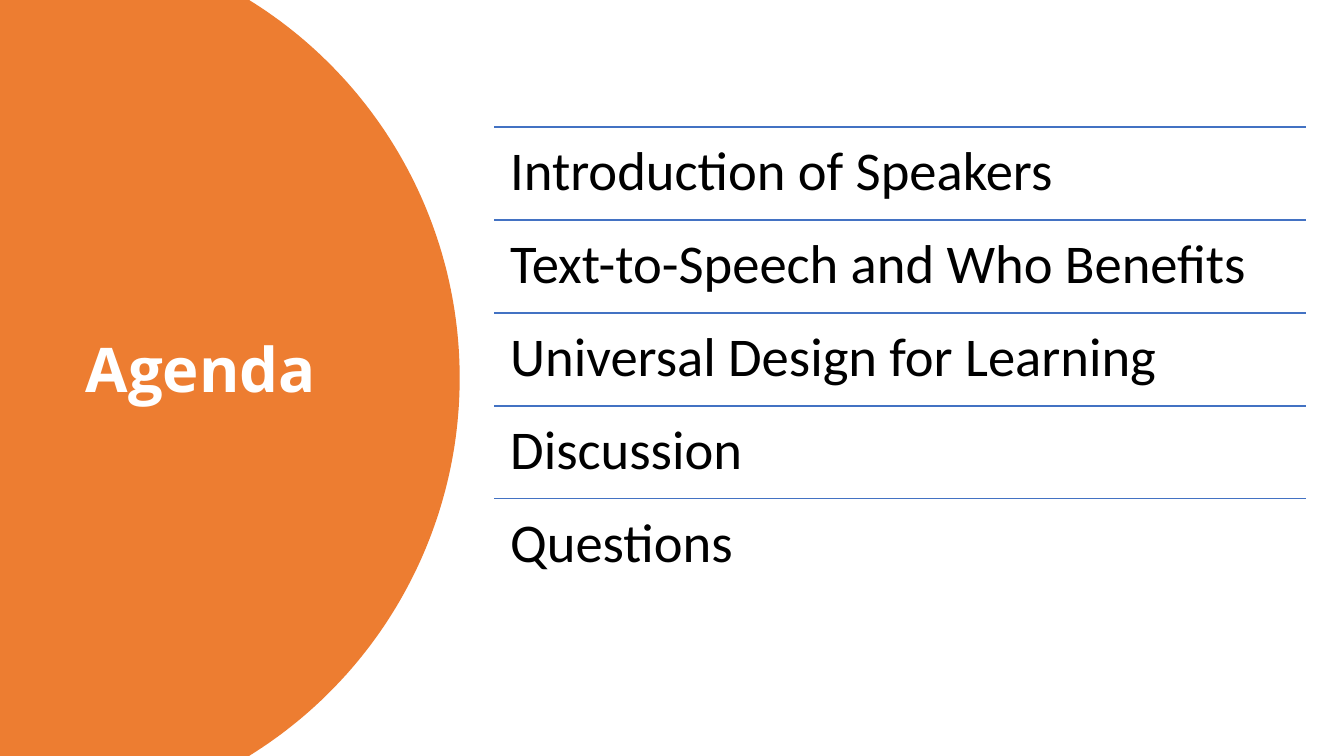
from math import asin, cos, sin

from lxml.etree import SubElement
from pptx import Presentation
from pptx.dml.color import RGBColor
from pptx.enum.shapes import MSO_CONNECTOR
from pptx.enum.text import MSO_ANCHOR, MSO_AUTO_SIZE, PP_ALIGN
from pptx.oxml.ns import qn
from pptx.util import Inches, Pt

AGENDA = [
    "Introduction of Speakers",
    "Text-to-Speech and Who Benefits",
    "Universal Design for Learning",
    "Discussion",
    "Questions",
]


def color(hex_value):
    return RGBColor.from_string(hex_value)


def style_text(frame, text, font_name, size, hex_value, bold=False):
    frame.text = text
    frame.word_wrap = True
    frame.auto_size = MSO_AUTO_SIZE.NONE
    paragraph = frame.paragraphs[0]
    paragraph.alignment = PP_ALIGN.LEFT
    paragraph.line_spacing = 0.9
    paragraph.font.name = font_name
    paragraph.font.size = Pt(size)
    paragraph.font.bold = bold
    paragraph.font.color.rgb = color(hex_value)


def add_title_panel(slide, left, top, width, height):
    radius = 4.41
    center_x, center_y = left + width - radius, top + height / 2
    half_angle = asin(height / 2 / radius)
    steps = 120
    angles = [half_angle * (2 * step / steps - 1) for step in range(steps + 1)]
    arc = [
        (Inches(center_x + radius * cos(angle)), Inches(center_y + radius * sin(angle)))
        for angle in angles
    ]
    outline = slide.shapes.build_freeform(Inches(left), Inches(top))
    outline.add_line_segments(arc + [(Inches(left), Inches(top + height))], close=True)
    panel = outline.convert_to_shape()
    panel.shadow.inherit = False
    panel.fill.solid()
    panel.fill.fore_color.rgb = color("ED7D31")
    panel.line.fill.background()

    title = slide.shapes.title
    title.element.addprevious(panel.element)
    title.left, title.top = Inches(left + 0.75), Inches(top + 1.26)
    title.width, title.height = Inches(3.5), Inches(4.88)
    title.text_frame.vertical_anchor = MSO_ANCHOR.MIDDLE
    style_text(title.text_frame, "Agenda", "Open Sans", 44, "FFFFFF", bold=True)


def add_agenda_item(slide, text, left, top, width, height):
    rule = slide.shapes.add_connector(
        MSO_CONNECTOR.STRAIGHT,
        Inches(left), Inches(top), Inches(left + width), Inches(top),
    )
    rule.line.color.rgb = color("4372C3")
    rule.line.width = Pt(1)
    SubElement(rule.element.spPr, qn("a:effectLst"))

    item = slide.shapes.add_textbox(
        Inches(left), Inches(top), Inches(width), Inches(height)
    )
    frame = item.text_frame
    frame.margin_left = frame.margin_right = Inches(0.16)
    frame.margin_top = frame.margin_bottom = Inches(0.16)
    frame.vertical_anchor = MSO_ANCHOR.TOP
    style_text(frame, text, "Calibri", 39, "000000")


def add_agenda(slide, left, top, width, height):
    row_height = height / len(AGENDA)
    for row, text in enumerate(AGENDA):
        add_agenda_item(slide, text, left, top + row * row_height, width, row_height)


def main():
    deck = Presentation()
    deck.slide_width, deck.slide_height = Inches(13.33), Inches(7.5)
    slide = deck.slides.add_slide(deck.slide_layouts[5])
    add_title_panel(slide, 0, 0, 4.56, 7.5)
    add_agenda(slide, 4.9, 1.26, 8.05, 4.61)
    deck.save("out.pptx")


if __name__ == "__main__":
    main()
